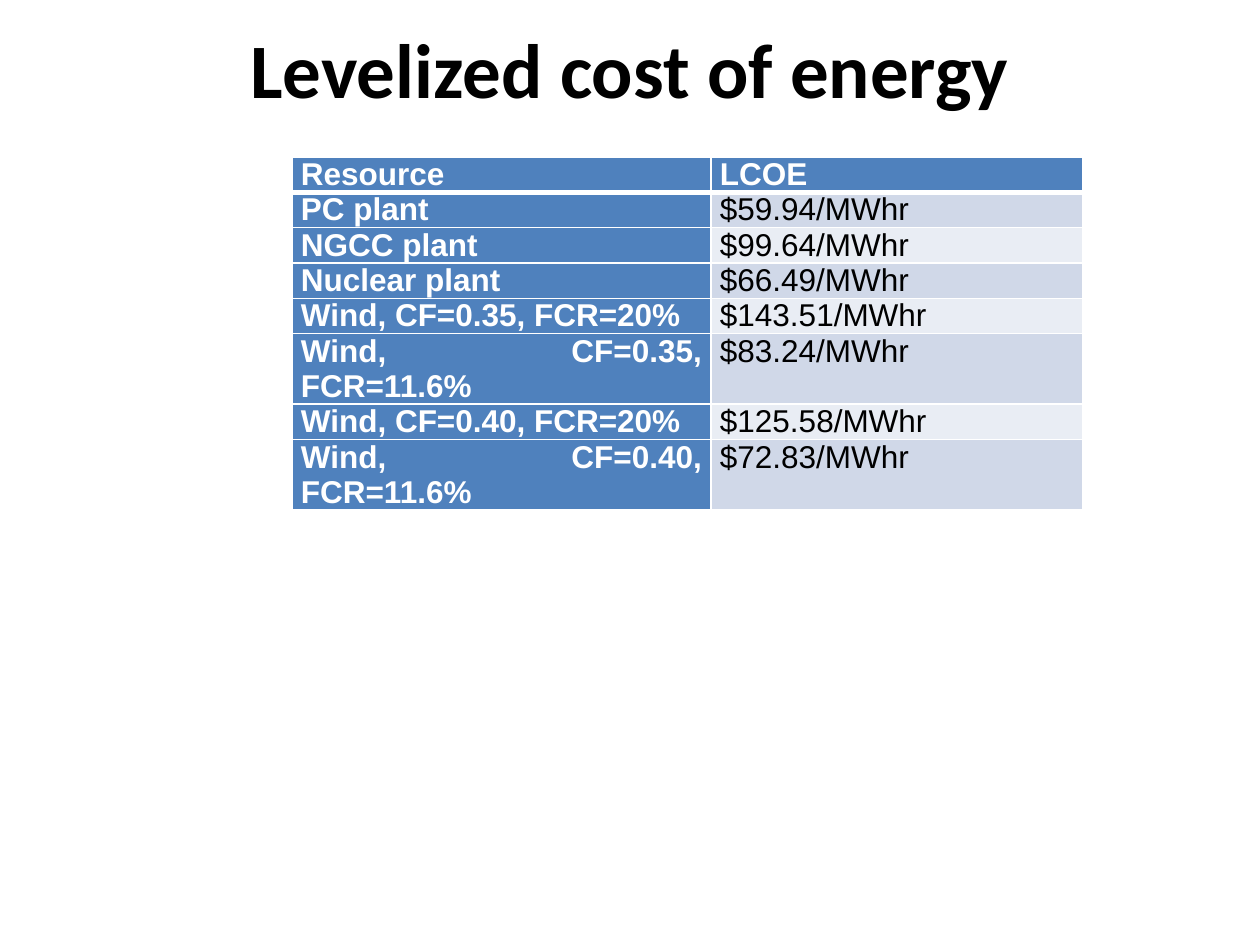
from lxml.etree import SubElement
from pptx import Presentation
from pptx.dml.color import RGBColor
from pptx.enum.text import MSO_ANCHOR, PP_ALIGN
from pptx.oxml.ns import qn
from pptx.util import Pt

PX = 914400 // 126
BLUE, WHITE, BLACK = "4F81BD", "FFFFFF", "000000"
BANDS = ["E9EDF4", "D0D8E8"]
COSTS = [
    ("Resource", "LCOE"),
    ("PC plant", "$59.94/MWhr"),
    ("NGCC plant", "$99.64/MWhr"),
    ("Nuclear plant", "$66.49/MWhr"),
    ("Wind, CF=0.35, FCR=20%", "$143.51/MWhr"),
    ("Wind, CF=0.35, FCR=11.6%", "$83.24/MWhr"),
    ("Wind, CF=0.40, FCR=20%", "$125.58/MWhr"),
    ("Wind, CF=0.40, FCR=11.6%", "$72.83/MWhr"),
]
LINE_HEIGHT = 35


def color(value):
    return RGBColor.from_string(value)


def add_border(cell, side, points):
    """Draw one white cell edge; side is L, R, T or B, called in that order."""
    line = SubElement(cell._tc.get_or_add_tcPr(), qn(f"a:ln{side}"), w=str(Pt(points)))
    fill = SubElement(line, qn("a:solidFill"))
    SubElement(fill, qn("a:srgbClr"), val=WHITE)


deck = Presentation()
deck.slide_width, deck.slide_height = 1260 * PX, 945 * PX
page = deck.slides.add_slide(deck.slide_layouts[5])

title = page.shapes.title
title.left, title.top, title.width, title.height = 63 * PX, 0, 1134 * PX, 135 * PX
title.text_frame.text = "Levelized cost of energy"
title.text_frame.vertical_anchor = MSO_ANCHOR.MIDDLE
para = title.text_frame.paragraphs[0]
para.alignment = PP_ALIGN.CENTER
para.font.name, para.font.size, para.font.bold = "Calibri", Pt(44), True
para.font.color.rgb = color(BLACK)

frame = page.shapes.add_table(len(COSTS), 2, 292 * PX, 157 * PX, 791 * PX, 350 * PX)
table = frame.table
table.first_col = True
table.columns[0].width, table.columns[1].width = 419 * PX, 372 * PX

for row, texts in enumerate(COSTS):
    lines = 2 if "11.6%" in texts[0] else 1
    table.rows[row].height = lines * LINE_HEIGHT * PX
    for column, text in enumerate(texts):
        cell = table.cell(row, column)
        heading = row == 0 or column == 0
        cell.margin_left = cell.margin_right = 9 * PX
        cell.margin_top = cell.margin_bottom = 0
        for side in "LRTB":
            below_header = (row, side) in [(0, "B"), (1, "T")]
            add_border(cell, side, 3 if below_header else 1)
        cell.fill.solid()
        cell.fill.fore_color.rgb = color(BLUE if heading else BANDS[row % 2])
        cell.text = text
        para = cell.text_frame.paragraphs[0]
        para.alignment = PP_ALIGN.JUSTIFY
        para.font.name, para.font.size, para.font.bold = "Arial", Pt(18), heading
        para.font.color.rgb = color(WHITE if heading else BLACK)

deck.save("out.pptx")
